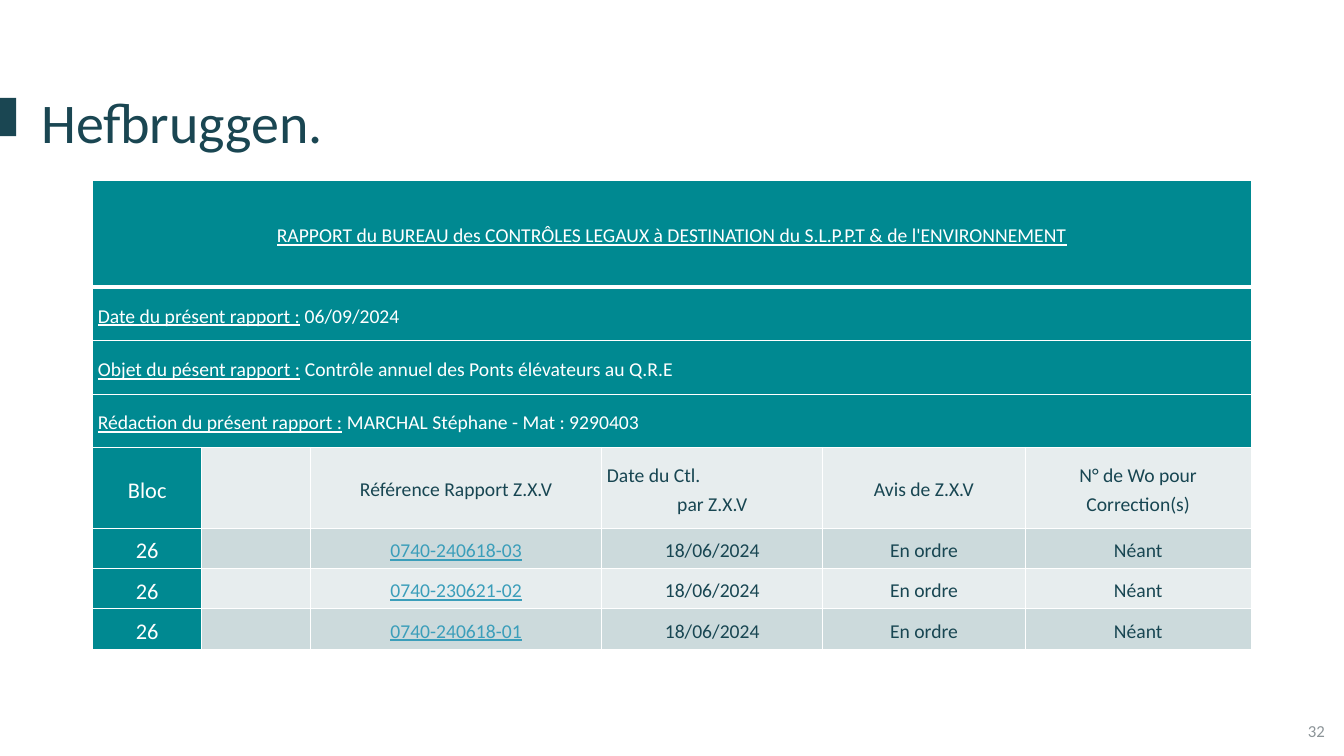
from dataclasses import dataclass

from lxml.etree import SubElement
from pptx import Presentation
from pptx.dml.color import RGBColor
from pptx.enum.shapes import MSO_SHAPE
from pptx.enum.text import MSO_ANCHOR, PP_ALIGN
from pptx.oxml.ns import qn
from pptx.util import Emu, Pt

EMU_PER_PX = 9144
FONT = "Calibri"
COLORS = {
    "white": "FFFFFF",
    "navy": "1A4652",
    "ink": "184652",
    "teal": "008991",
    "light": "E7EDEE",
    "dark": "CCDADC",
    "link": "3B9EBA",
    "grey": "8C9498",
}
COLUMN_WIDTHS = [108, 108, 289, 219, 201, 224]
ROW_HEIGHTS = [106, 53, 53, 53, 80, 40, 40, 40]
BANNER_ROWS = 4


@dataclass
class Span:
    text: str
    size: int = 14
    color: str = "ink"
    underline: bool = False


@dataclass
class Banner:
    label: str
    value: str = ""
    align: PP_ALIGN = PP_ALIGN.LEFT


@dataclass
class Inspection:
    block: str
    reference: str
    date: str
    advice: str
    order: str


BANNERS = [
    Banner("RAPPORT du BUREAU des CONTRÔLES LEGAUX à DESTINATION du S.L.P.P.T & de l'ENVIRONNEMENT",
           align=PP_ALIGN.CENTER),
    Banner("Date du présent rapport :", " 06/09/2024"),
    Banner("Objet du pésent rapport :", " Contrôle annuel des Ponts élévateurs au Q.R.E"),
    Banner("Rédaction du présent rapport :", " MARCHAL Stéphane - Mat : 9290403"),
]
HEADINGS = ["Bloc", "", "Référence Rapport Z.X.V", "Date du Ctl.", "Avis de Z.X.V",
            "N° de Wo pour Correction(s)"]
INSPECTIONS = [
    Inspection("26", reference, "18/06/2024", "En ordre", "Néant")
    for reference in ("0740-240618-03", "0740-230621-02", "0740-240618-01")
]


def px(length: int) -> Emu:
    return Emu(length * EMU_PER_PX)


def rgb(name: str) -> RGBColor:
    return RGBColor.from_string(COLORS[name])


def write(para, spans: list[Span], align: PP_ALIGN) -> None:
    para.alignment = align
    for item in spans:
        span = para.add_run()
        span.text = item.text
        span.font.name = FONT
        span.font.size = Pt(item.size)
        span.font.color.rgb = rgb(item.color)
        span.font.underline = item.underline


def write_cell(para, spans: list[Span], align: PP_ALIGN = PP_ALIGN.CENTER) -> None:
    para.line_spacing = 1.2
    para.space_after = Pt(3)
    write(para, spans, align)


def style_cell(cell, fill: str, top: int, bottom: int) -> None:
    cell.vertical_anchor = MSO_ANCHOR.MIDDLE
    cell.margin_left = cell.margin_right = px(5)
    cell.margin_top = cell.margin_bottom = 0
    properties = cell._tc.get_or_add_tcPr()
    for side, width in {"L": 1, "R": 1, "T": top, "B": bottom}.items():
        line = SubElement(properties, qn(f"a:ln{side}"), w=str(Pt(width)))
        paint = SubElement(line, qn("a:solidFill"))
        SubElement(paint, qn("a:srgbClr"), val=COLORS["white"])
    cell.fill.solid()
    cell.fill.fore_color.rgb = rgb(fill)


def add_title(page) -> None:
    title = page.shapes.title
    title.left, title.top, title.width, title.height = px(31), px(82), px(1235), px(77)
    title.text_frame.vertical_anchor = MSO_ANCHOR.TOP
    write(title.text_frame.paragraphs[0], [Span("Hefbruggen.", 40, "navy")], PP_ALIGN.LEFT)


def add_marker(page) -> None:
    marker = page.shapes.add_shape(MSO_SHAPE.RECTANGLE, 0, px(97), px(16), px(38))
    marker.shadow.inherit = False
    marker.fill.solid()
    marker.fill.fore_color.rgb = rgb("navy")
    marker.line.fill.background()


def add_page_number(page) -> None:
    box = page.shapes.add_textbox(px(1024), px(705), px(300), px(40))
    box.text_frame.word_wrap = True
    box.text_frame.vertical_anchor = MSO_ANCHOR.MIDDLE
    write(box.text_frame.paragraphs[0], [Span("32", 12, "grey")], PP_ALIGN.RIGHT)


def add_report(page) -> None:
    frame = page.shapes.add_table(len(ROW_HEIGHTS), len(COLUMN_WIDTHS), px(92), px(179),
                                  px(sum(COLUMN_WIDTHS)), px(sum(ROW_HEIGHTS)))
    table = frame.table
    table.first_row = table.horz_banding = False
    for column, width in zip(table.columns, COLUMN_WIDTHS):
        column.width = px(width)
    for number, (row, height) in enumerate(zip(table.rows, ROW_HEIGHTS)):
        row.height = px(height)
        band = "dark" if number % 2 else "light"
        for position, cell in enumerate(row.cells):
            fill = "teal" if number < BANNER_ROWS or position == 0 else band
            style_cell(cell, fill, 3 if number == 1 else 1, 3 if number == 0 else 1)

    last = len(COLUMN_WIDTHS) - 1
    for number, banner in enumerate(BANNERS):
        cell = table.cell(number, 0)
        cell.merge(table.cell(number, last))
        spans = [Span(banner.label, color="white", underline=True)]
        if banner.value:
            spans.append(Span(banner.value, color="white"))
        write_cell(cell.text_frame.paragraphs[0], spans, banner.align)

    for position, heading in enumerate(HEADINGS):
        if heading:
            span = Span(heading) if position else Span(heading, 16, "white")
            write_cell(table.cell(BANNER_ROWS, position).text_frame.paragraphs[0], [span])
    date_text = table.cell(BANNER_ROWS, HEADINGS.index("Date du Ctl.")).text_frame
    date_text.paragraphs[0].alignment = PP_ALIGN.LEFT
    date_text.paragraphs[0].space_after = Pt(0)
    write_cell(date_text.add_paragraph(), [Span("par Z.X.V")])

    for number, entry in enumerate(INSPECTIONS, BANNER_ROWS + 1):
        spans = {
            0: Span(entry.block, 16, "white"),
            2: Span(entry.reference, color="link", underline=True),
            3: Span(entry.date),
            4: Span(entry.advice),
            5: Span(entry.order),
        }
        for position, span in spans.items():
            write_cell(table.cell(number, position).text_frame.paragraphs[0], [span])


def main() -> None:
    deck = Presentation()
    deck.slide_width, deck.slide_height = px(1333), px(750)
    page = deck.slides.add_slide(deck.slide_layouts[5])
    add_marker(page)
    add_page_number(page)
    add_title(page)
    add_report(page)
    deck.save("out.pptx")


if __name__ == "__main__":
    main()
